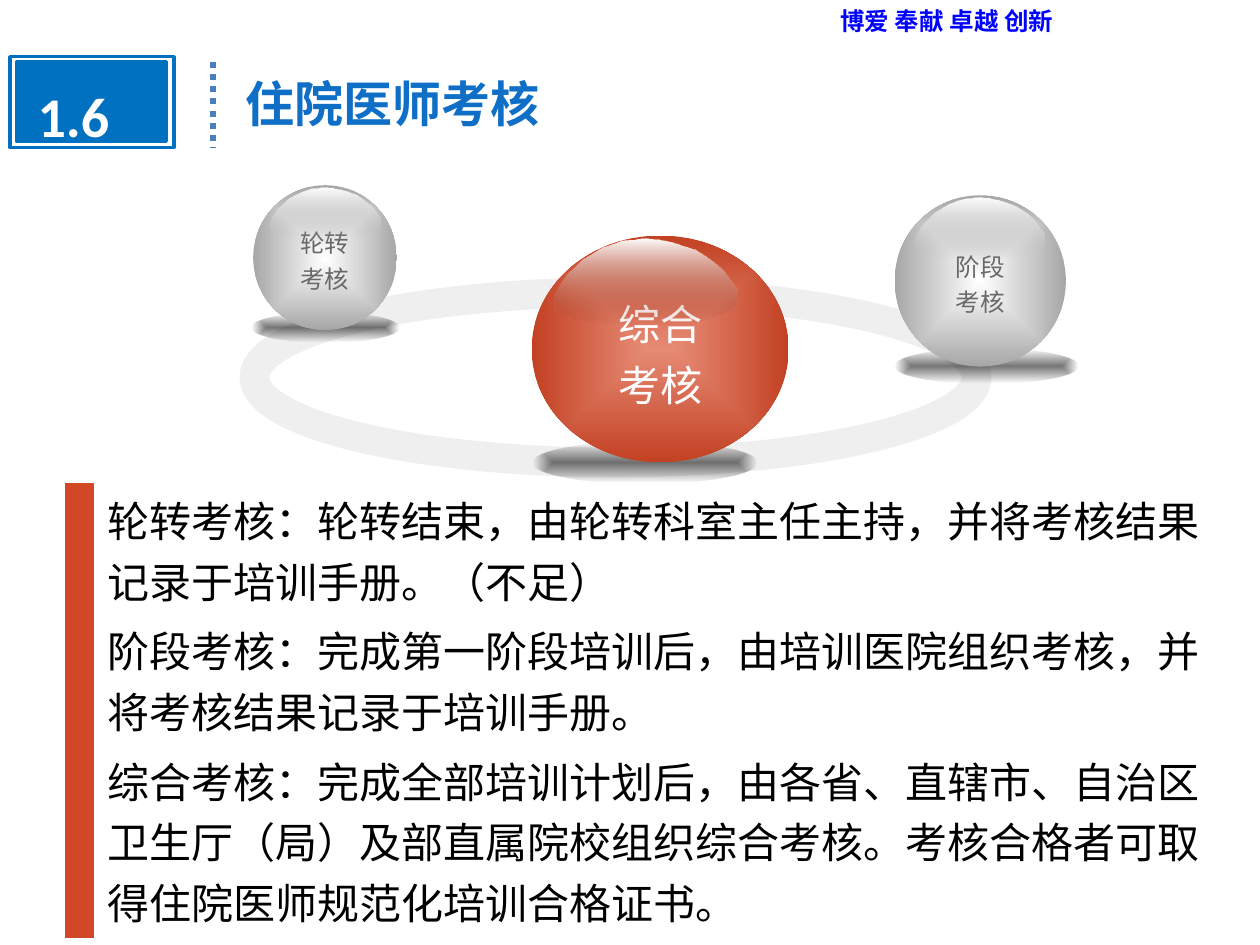
from lxml import etree
from pptx import Presentation
from pptx.dml.color import RGBColor
from pptx.enum.dml import MSO_LINE
from pptx.enum.shapes import MSO_CONNECTOR, MSO_SHAPE
from pptx.enum.text import MSO_ANCHOR, PP_ALIGN
from pptx.oxml import parse_xml
from pptx.oxml.ns import nsdecls, qn
from pptx.util import Inches, Pt

OVAL, RECTANGLE = MSO_SHAPE.OVAL, MSO_SHAPE.RECTANGLE
CENTER, LEFT = PP_ALIGN.CENTER, PP_ALIGN.LEFT
MIDDLE, TOP = MSO_ANCHOR.MIDDLE, MSO_ANCHOR.TOP
STRAIGHT, DOTTED = MSO_CONNECTOR.STRAIGHT, MSO_LINE.ROUND_DOT

SLOGAN = "博爱 奉献 卓越 创新"
SECTION = "1.6"
TITLE = "住院医师考核"
DETAILS = [
    "轮转考核：轮转结束，由轮转科室主任主持，并将考核结果记录于培训手册。（不足）",
    "阶段考核：完成第一阶段培训后，由培训医院组织考核，并将考核结果记录于培训手册。",
    "综合考核：完成全部培训计划后，由各省、直辖市、自治区卫生厅（局）及部直属院校组织综合考核。"
    "考核合格者可取得住院医师规范化培训合格证书。",
]
BADGE = [((0.08, 0.45, 1.3, 0.72), "FFFFFF"), ((0.13, 0.49, 1.19, 0.63), "0070C0")]
RING = (2.02, 2.32, 5.73, 1.35)
SHADOWS = [(2, 2.48, 1.17, 0.24), (4.23, 3.51, 1.78, 0.33), (7.1, 2.77, 1.46, 0.27)]
GRAY = {"inner": "FFFFFF", "outer": "A7A7A7", "gloss_end": "BFBFBF", "size": 14, "color": "696969"}
RED = {"inner": "E68A74", "outer": "C34123", "gloss_end": "943620", "size": 24, "color": "FFFFFF"}
BALLS = [
    (["阶段", "考核"], (7.1, 1.55, 1.36, 1.36), (7.26, 1.57, 1.03, 0.49), GRAY),
    (["轮转", "考核"], (2.01, 1.47, 1.14, 1.15), (2.14, 1.49, 0.88, 0.41), GRAY),
    (["综合", "考核"], (4.22, 1.87, 2.04, 1.8), (4.39, 1.89, 1.46, 0.69), RED),
]
GLOSS_OUTLINE = [
    (144, 39), (146, 43), (146, 47), (146, 50), (144, 54), (141, 57), (137, 59), (132, 61),
    (127, 63), (121, 65), (114, 67), (107, 68), (99, 69), (91, 69), (88, 70), (53, 70),
    (46, 69), (39, 69), (32, 68), (26, 67), (21, 66), (16, 65), (12, 63), (8, 62), (5, 59),
    (2, 57), (1, 54), (0, 51), (1, 48), (2, 44), (6, 36), (11, 29), (17, 23), (23, 17),
    (30, 13), (38, 8), (46, 5), (55, 2), (65, 1), (74, 0), (84, 1), (94, 3), (103, 6),
    (112, 9), (120, 14), (127, 19), (134, 25), (139, 32),
]
RADIAL = '<a:path path="shape"><a:fillToRect l="50000" t="50000" r="50000" b="50000"/></a:path>'
DOWNWARD = '<a:lin ang="5400000" scaled="0"/>'


def rgb(value):
    return RGBColor.from_string(value)


def box(place):
    return [Inches(value) for value in place]


def set_gradient(shape, stops, direction):
    shape.fill.background()
    stop_xml = "".join(
        f'<a:gs pos="{position * 1000}"><a:srgbClr val="{color}">'
        f'<a:alpha val="{alpha * 1000}"/></a:srgbClr></a:gs>'
        for position, color, alpha in stops
    )
    gradient = parse_xml(
        f'<a:gradFill {nsdecls("a")} rotWithShape="1"><a:gsLst>{stop_xml}</a:gsLst>{direction}</a:gradFill>'
    )
    properties = shape.fill._xPr
    properties.replace(properties.find(qn("a:noFill")), gradient)


def add_plain_shape(slide, kind, place):
    shape = slide.shapes.add_shape(kind, *box(place))
    shape.shadow.inherit = False
    shape.line.fill.background()
    return shape


def write_text(frame, lines, size, color, font="Calibri", bold=False, **paragraph_format):
    for index, line in enumerate(lines):
        paragraph = frame.paragraphs[0] if index == 0 else frame.add_paragraph()
        for name, value in paragraph_format.items():
            setattr(paragraph, name, value)
        run = paragraph.add_run()
        run.text = line
        for name, value in {"name": font, "size": Pt(size), "bold": bold}.items():
            setattr(run.font, name, value)
        run.font.color.rgb = rgb(color)


def add_header(slide):
    for place, color in BADGE:
        shape = add_plain_shape(slide, RECTANGLE, place)
        shape.fill.solid()
        shape.fill.fore_color.rgb = rgb(color)
        shape.line.color.rgb = rgb("0070C0")
        shape.line.width = Pt(2)
    divider = slide.shapes.add_connector(STRAIGHT, *box((1.69, 0.49, 1.69, 1.17)))
    divider.line.color.rgb = rgb("4B7EBC")
    divider.line.width = Pt(3.5)
    divider.line.dash_style = DOTTED
    etree.SubElement(divider.line._get_or_add_ln().getparent(), qn("a:effectLst"))

    slogan = slide.shapes.add_textbox(*box((6.57, 0, 3.43, 0.4))).text_frame
    slogan.word_wrap = True
    write_text(slogan, [SLOGAN], 14, "0000FF", bold=True)
    section = slide.shapes.add_textbox(*box((0.2, 0.6, 0.77, 0.63))).text_frame
    section.word_wrap = False
    write_text(section, [SECTION], 32, "FFFFFF", bold=True)

    title = slide.shapes.title
    title.left, title.top, title.width, title.height = box((1.85, 0.4, 2.8, 0.83))
    title.text_frame.word_wrap = False
    title.text_frame.vertical_anchor = MIDDLE
    write_text(title.text_frame, [TITLE], 28, "0F6FC6", bold=True, alignment=LEFT)


def add_ring(slide):
    ring = add_plain_shape(slide, OVAL, RING)
    ring.fill.background()
    ring.line.color.rgb = rgb("696969")
    ring.line.width = Pt(17)
    color = ring.line._get_or_add_ln().find(".//" + qn("a:srgbClr"))
    etree.SubElement(color, qn("a:alpha"), val="9000")
    for place in SHADOWS:
        shadow = add_plain_shape(slide, OVAL, place)
        set_gradient(shadow, [(0, "000000", 54), (97, "000000", 0)], RADIAL)


def add_balls(slide):
    for lines, place, _, style in BALLS:
        ball = add_plain_shape(slide, OVAL, place)
        set_gradient(ball, [(0, style["inner"], 100), (100, style["outer"], 100)], RADIAL)
        ball.text_frame.vertical_anchor = MIDDLE
        write_text(ball.text_frame, lines, style["size"], style["color"], "Arial",
                   alignment=CENTER, line_spacing=1.2)
    for _, _, place, style in BALLS:
        builder = slide.shapes.build_freeform(*GLOSS_OUTLINE[0], scale=Inches(0.01))
        builder.add_line_segments(GLOSS_OUTLINE[1:], close=True)
        gloss = builder.convert_to_shape()
        gloss.left, gloss.top, gloss.width, gloss.height = box(place)
        gloss.shadow.inherit = False
        gloss.line.fill.background()
        set_gradient(gloss, [(0, "FFFFFF", 100), (100, style["gloss_end"], 0)], DOWNWARD)


def add_details(slide):
    table = slide.shapes.add_table(1, 2, *box((0.51, 3.83, 9.13, 3.05))).table
    table.first_row = table.horz_banding = False
    for column, width in zip(table.columns, (0.24, 8.89)):
        column.width = Inches(width)
    accent, details = table.cell(0, 0), table.cell(0, 1)
    accent.fill.solid()
    accent.fill.fore_color.rgb = rgb("D24726")
    details.fill.background()
    details.vertical_anchor = TOP
    write_text(details.text_frame, DETAILS, 24, "000000", space_before=Pt(4.8))


def main():
    presentation = Presentation()
    presentation.slide_width, presentation.slide_height = Inches(10), Inches(7.5)
    slide = presentation.slides.add_slide(presentation.slide_layouts[5])
    add_ring(slide)
    add_balls(slide)
    add_details(slide)
    add_header(slide)
    presentation.save("out.pptx")


if __name__ == "__main__":
    main()
